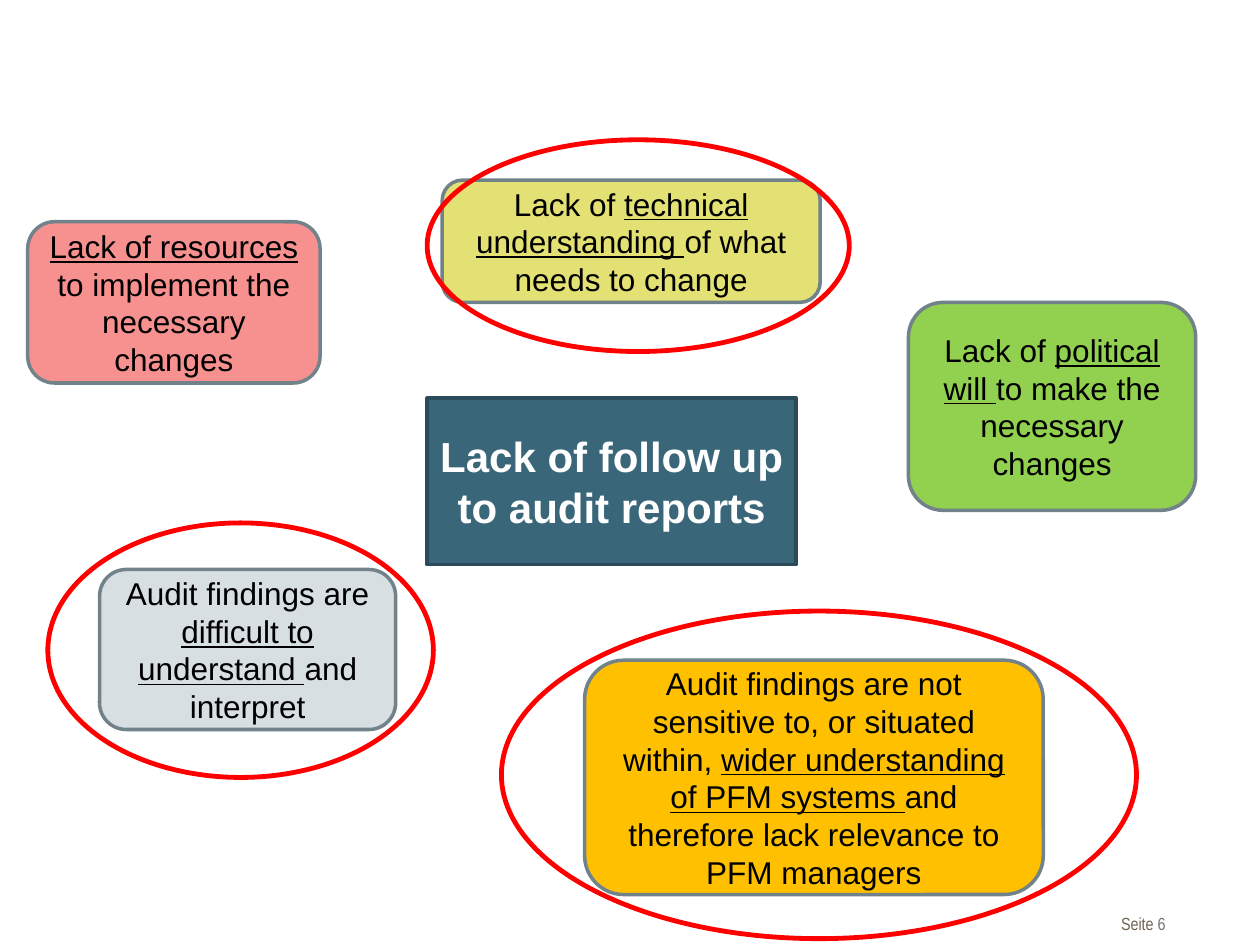
from dataclasses import dataclass

from pptx import Presentation
from pptx import util as u
from pptx.dml.color import RGBColor
from pptx.enum import shapes, text


@dataclass(frozen=True)
class Theme:
    font: str = "Arial"
    footer_font: str = "Arial Narrow"
    topic_size: int = 24
    cause_size: int = 18
    footer_size: int = 10
    white: str = "FFFFFF"
    black: str = "000000"
    topic_fill: str = "3A667A"
    topic_line: str = "2B4B5A"
    cause_line: str = "72828A"
    ring: str = "FF0000"
    green: str = "92D050"
    yellow: str = "E3E074"
    pink: str = "F79190"
    grey: str = "D7DFE3"
    amber: str = "FFC000"
    footer: str = "6E6452"
    page_number: str = "727272"
    line_width: float = 2
    ring_width: float = 2.75


THEME = Theme()

CAUSES = [
    ((7.21, 2.4, 2.28, 1.65), THEME.green,
     "Lack of ", "political will ", "to make the necessary changes"),
    ((3.51, 1.43, 3, 0.97), THEME.yellow,
     "Lack of ", "technical understanding ", "of what needs to change"),
    ((0.22, 1.76, 2.32, 1.28), THEME.pink,
     "", "Lack of resources ", "to implement the necessary changes"),
    ((0.79, 4.52, 2.35, 1.27), THEME.grey,
     "Audit findings are ", "difficult to understand ", "and interpret"),
    ((4.64, 5.24, 3.64, 1.86), THEME.amber,
     "Audit findings are not sensitive to, or situated within, ",
     "wider understanding of PFM systems ",
     "and therefore lack relevance to PFM managers"),
]

RINGS = [
    (3.39, 1.11, 3.35, 1.68),
    (3.98, 4.85, 5.04, 2.6),
    (0.38, 4.15, 3.06, 2.02),
]


def add_span(para, words, *, font, size, color, bold=False, underline=False):
    span = para.add_run()
    span.text = words
    span.font.name = font
    span.font.size = u.Pt(size)
    span.font.color.rgb = RGBColor.from_string(color)
    span.font.bold = bold
    span.font.underline = underline


class Canvas:
    def __init__(self, slide, theme):
        self.slide = slide
        self.theme = theme

    def shape(self, kind, place, line, width, fill=None):
        box = self.slide.shapes.add_shape(kind, *map(u.Inches, place))
        box.shadow.inherit = False
        box.line.color.rgb = RGBColor.from_string(line)
        box.line.width = u.Pt(width)
        if fill:
            box.fill.solid()
            box.fill.fore_color.rgb = RGBColor.from_string(fill)
        else:
            box.fill.background()
        return box

    def centred_para(self, box):
        frame = box.text_frame
        frame.word_wrap = True
        frame.vertical_anchor = text.MSO_ANCHOR.MIDDLE
        para = frame.paragraphs[0]
        para.alignment = text.PP_ALIGN.CENTER
        return para

    def topic(self, place, words):
        style = self.theme
        box = self.shape(shapes.MSO_SHAPE.RECTANGLE, place,
                         style.topic_line, style.line_width, style.topic_fill)
        add_span(self.centred_para(box), words, font=style.font,
                 size=style.topic_size, color=style.white, bold=True)

    def cause(self, place, fill, before, stressed, after):
        style = self.theme
        box = self.shape(shapes.MSO_SHAPE.ROUNDED_RECTANGLE, place,
                         style.cause_line, style.line_width, fill)
        para = self.centred_para(box)
        for words in filter(None, (before, stressed, after)):
            add_span(para, words, font=style.font, size=style.cause_size,
                     color=style.black, underline=words == stressed)

    def ring(self, place):
        self.shape(shapes.MSO_SHAPE.OVAL, place,
                   self.theme.ring, self.theme.ring_width)

    def footer(self, place, label, number):
        style = self.theme
        box = self.slide.shapes.add_textbox(*map(u.Inches, place))
        frame = box.text_frame
        frame.word_wrap = True
        frame.margin_right = 0
        para = frame.paragraphs[0]
        para.alignment = text.PP_ALIGN.RIGHT
        for words, color in ((label, style.footer), (number, style.page_number)):
            add_span(para, words, font=style.footer_font,
                     size=style.footer_size, color=color)


def main():
    deck = Presentation()
    deck.slide_width, deck.slide_height = u.Inches(10), u.Inches(7.5)
    page = deck.slides.add_slide(deck.slide_layouts[6])
    canvas = Canvas(page, THEME)
    canvas.footer((8.24, 7.2, 1.01, 0.27), "Seite ", "6")
    canvas.topic((3.39, 3.16, 2.93, 1.32), "Lack of follow up to audit reports")
    for cause in CAUSES:
        canvas.cause(*cause)
    for place in RINGS:
        canvas.ring(place)
    deck.save("out.pptx")


if __name__ == "__main__":
    main()
